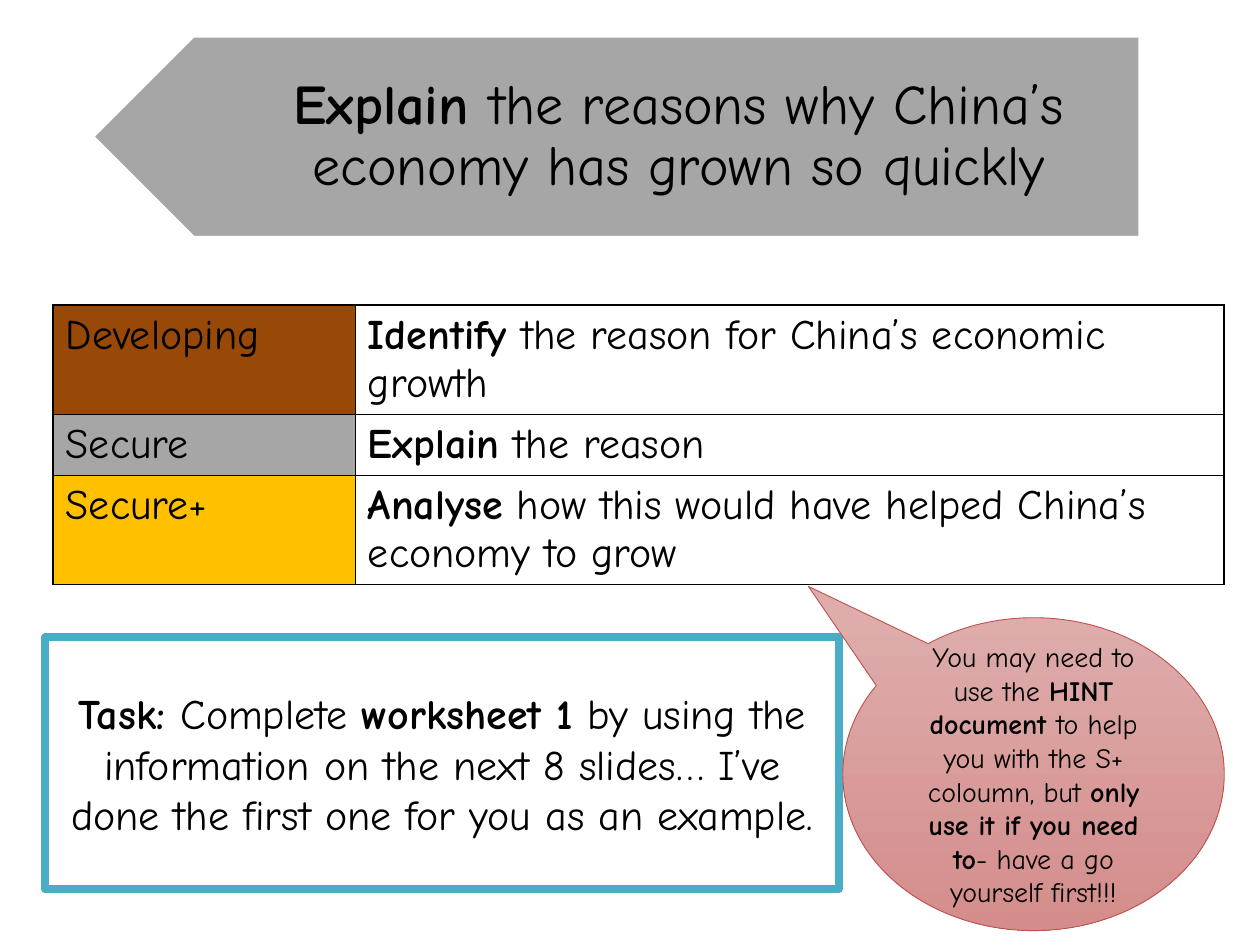
from lxml import etree
from pptx import Presentation
from pptx import util as u
from pptx.dml.color import RGBColor
from pptx.enum import shapes, text
from pptx.oxml.ns import qn

FONT = "Comic Neue"
LEVELS = [
    ("Developing", "984807", "*Identify* the reason for China’s economic growth"),
    ("Secure", "A6A6A6", "*Explain* the reason"),
    ("Secure+", "FFC000", "*Analyse* how this would have helped China’s economy to grow"),
]
TITLE = "*Explain *the reasons why China’s economy has grown so quickly"
TASK = ("*Task: *Complete *worksheet 1* by using the information on the next "
        "8 slides… I’ve done the first one for you as an example.")
HINT = ("You may need to use the *HINT document *to help you with the S+ coloumn, "
        "but *only use it if you need to*- have a go yourself first!!!")


def rgb(value):
    return RGBColor.from_string(value)


def write(tf, marked, size, align=None):
    p = tf.paragraphs[0]
    p.alignment = align
    for i, part in enumerate(marked.split("*")):
        if part:
            r = p.add_run()
            r.text = part
            r.font.name, r.font.size, r.font.bold = FONT, u.Pt(size), i % 2 == 1
            r.font.color.rgb = rgb("000000")
    return p


def write_centred(sp, marked, size):
    tf = sp.text_frame
    tf.word_wrap = True
    tf.vertical_anchor = text.MSO_ANCHOR.MIDDLE
    return write(tf, marked, size, text.PP_ALIGN.CENTER)


def add_shape(s, kind, box, fill, line, width):
    sp = s.shapes.add_shape(kind, *map(u.Pt, box))
    sp.shadow.inherit = False
    if isinstance(fill, tuple):
        sp.fill.gradient()
        sp.fill.gradient_angle = 270
        for stop, colour in zip(sp.fill.gradient_stops, fill):
            stop.color.rgb = rgb(colour)
    else:
        sp.fill.solid()
        sp.fill.fore_color.rgb = rgb(fill)
    sp.line.color.rgb = rgb(line)
    sp.line.width = u.Pt(width)
    return sp


def add_borders(cell):
    tc_pr = cell._tc.get_or_add_tcPr()
    for i, side in enumerate(("lnL", "lnR", "lnT", "lnB")):
        ln = etree.Element(qn("a:" + side), w=str(u.Pt(1)))
        fill = etree.SubElement(ln, qn("a:solidFill"))
        etree.SubElement(fill, qn("a:srgbClr"), val="000000")
        tc_pr.insert(i, ln)


def add_levels(s):
    row_height = 29.2
    frame = s.shapes.add_table(len(LEVELS), 2, u.Pt(30.4), u.Pt(174.4),
                               u.Pt(669), u.Pt(row_height * len(LEVELS)))
    table = frame.table
    table.first_row = table.horz_banding = False
    for column, width in zip(table.columns, (172.7, 496.3)):
        column.width = u.Pt(width)
    for row, (level, colour, goal) in zip(table.rows, LEVELS):
        row.height = u.Pt(row_height)
        for cell, words in zip(row.cells, (level, goal)):
            write(cell.text_frame, words, 24)
            add_borders(cell)
        row.cells[0].fill.solid()
        row.cells[0].fill.fore_color.rgb = rgb(colour)
        row.cells[1].fill.background()


def add_title(s):
    arrow = add_shape(s, shapes.MSO_SHAPE.PENTAGON, (53.6, 21, 597.4, 114.2),
                      "A6A6A6", "FFFFFF", 1)
    arrow.rotation = 180
    tb = s.shapes.add_textbox(*map(u.Pt, (91, 21, 560, 114.2)))
    tf = tb.text_frame
    tf.margin_left, tf.margin_right = u.Pt(47.5), u.Pt(13.7)
    tf.margin_top = tf.margin_bottom = u.Pt(7.2)
    p = write_centred(tb, TITLE, 32)
    p.line_spacing = 0.9


def main():
    prs = Presentation()
    prs.slide_width, prs.slide_height = u.Pt(720), u.Pt(540)
    s = prs.slides.add_slide(prs.slide_layouts[6])
    add_levels(s)
    task = add_shape(s, shapes.MSO_SHAPE.RECTANGLE, (25.8, 364.2, 453.6, 144),
                     "FFFFFF", "4BACC6", 4.5)
    write_centred(task, TASK, 24)
    hint = add_shape(s, shapes.MSO_SHAPE.OVAL_CALLOUT, (481.6, 353, 218, 178.8),
                     ("DDACAB", "D48D8B"), "C0504D", 0.5)
    hint.adjustments[0], hint.adjustments[1] = -0.59, -0.6
    write_centred(hint, HINT, 16)
    add_title(s)
    prs.save("out.pptx")


if __name__ == "__main__":
    main()
